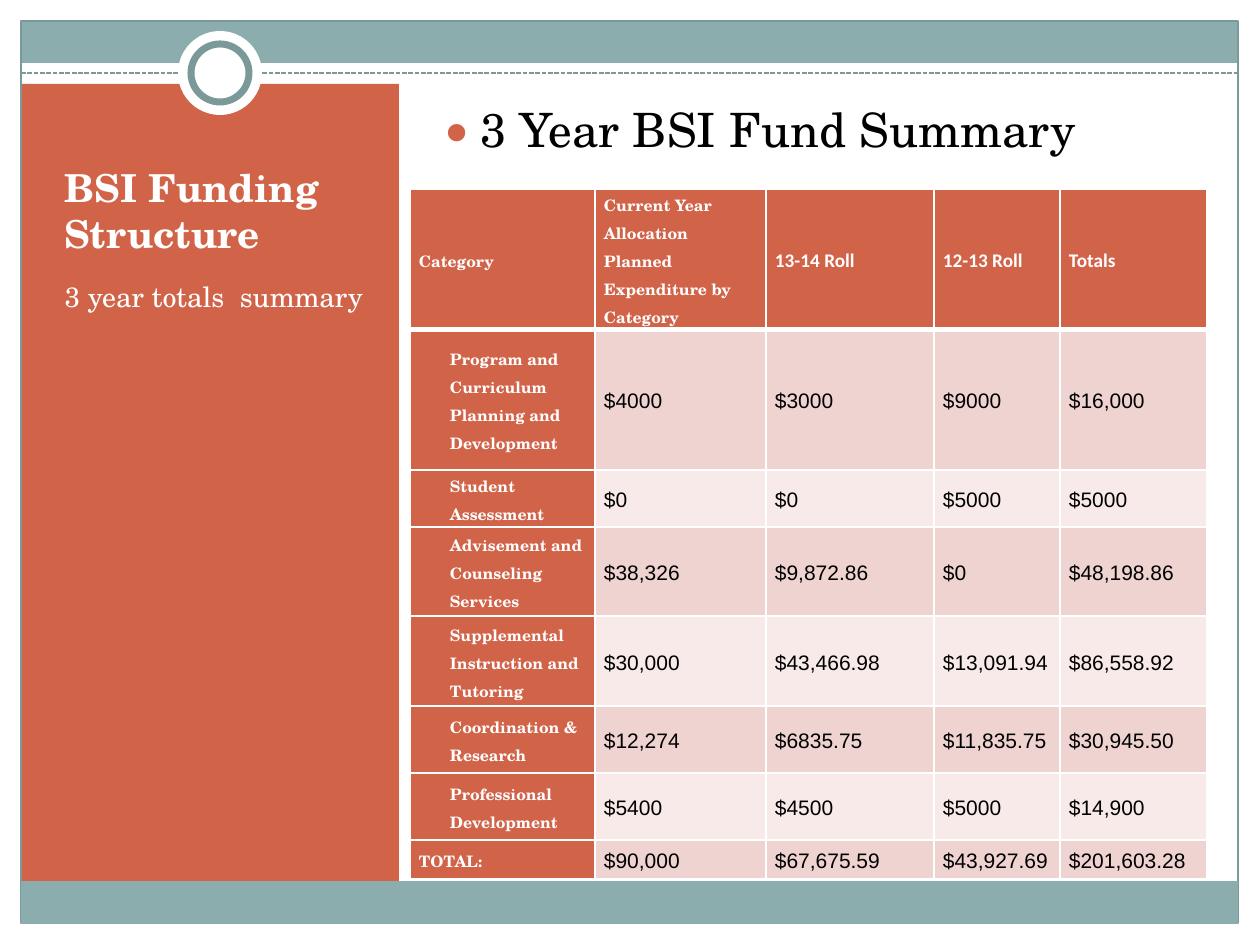
"""Build the BSI funding slide with its three-year summary table."""
from lxml import etree
from pptx import Presentation
from pptx import util as u
from pptx.dml.color import RGBColor
from pptx.enum import dml, shapes, text
from pptx.oxml import ns

WHITE = RGBColor(0xFF, 0xFF, 0xFF)
BLACK = RGBColor(0x00, 0x00, 0x00)
TEAL = RGBColor(0x8C, 0xAD, 0xAE)
SLATE = RGBColor(0x7C, 0x99, 0x9A)
RUST = RGBColor(0xD1, 0x63, 0x49)
BANDS = (RGBColor(0xEE, 0xD3, 0xD0), RGBColor(0xF7, 0xEA, 0xE9))
SERIF = "TeX Gyre Schola"

COLUMN_WIDTHS = [185, 171, 168, 126, 147]
ROW_HEIGHTS = [139, 141, 57, 89, 90, 67, 67, 39]
ROWS = [
    ["Category", "Current Year Allocation Planned Expenditure by Category",
     "13-14 Roll", "12-13 Roll", "Totals"],
    ["Program and Curriculum Planning and Development",
     "$4000", "$3000", "$9000", "$16,000"],
    ["Student Assessment", "$0", "$0", "$5000", "$5000"],
    ["Advisement and Counseling Services",
     "$38,326", "$9,872.86", "$0", "$48,198.86"],
    ["Supplemental Instruction and Tutoring",
     "$30,000", "$43,466.98", "$13,091.94", "$86,558.92"],
    ["Coordination & Research",
     "$12,274", "$6835.75", "$11,835.75", "$30,945.50"],
    ["Professional Development", "$5400", "$4500", "$5000", "$14,900"],
    ["TOTAL:", "$90,000", "$67,675.59", "$43,927.69", "$201,603.28"],
]


def px(length):
    return u.Emu(round(length * 914400 / 126))


def add_child(parent, tag, **attributes):
    child = etree.SubElement(parent, ns.qn(tag))
    for name, value in attributes.items():
        child.set(name, str(value))
    return child


def write_text(frame, words, *, size, color, font=SERIF, bold=False, spacing=1.0,
               before=0, after=0, indent=0, hanging=0, bullet=None):
    frame.word_wrap = True
    para = frame.paragraphs[0]
    para.alignment = text.PP_ALIGN.LEFT
    para.line_spacing = spacing
    para.space_before, para.space_after = u.Pt(before), u.Pt(after)
    properties = para._p.get_or_add_pPr()
    properties.set("marL", str(px(indent)))
    properties.set("indent", str(-px(hanging)))
    if bullet:
        tint = add_child(properties, "a:buClr")
        add_child(tint, "a:srgbClr", val=RUST)
        add_child(properties, "a:buSzPct", val=85000)
        add_child(properties, "a:buFont", typeface=SERIF)
        add_child(properties, "a:buChar", char=bullet)
    else:
        add_child(properties, "a:buNone")
    span = para.add_run()
    span.text = words
    span.font.name, span.font.size, span.font.bold = font, u.Pt(size), bold
    span.font.color.rgb = color


class SlideBuilder:
    """Hold the slide and its style, and add each kind of element."""

    def __init__(self, page):
        self.page = page

    def shape(self, kind, bounds, fill=None, line=None, width=1):
        box = self.page.shapes.add_shape(kind, *map(px, bounds))
        box.shadow.inherit = False
        if fill is None:
            box.fill.background()
        else:
            box.fill.solid()
            box.fill.fore_color.rgb = fill
        if line is None:
            box.line.fill.background()
        else:
            box.line.color.rgb, box.line.width = line, u.Pt(width)

    def rectangle(self, bounds, **style):
        self.shape(shapes.MSO_SHAPE.RECTANGLE, bounds, **style)

    def circle(self, center, diameter, **style):
        left, top = (middle - diameter / 2 for middle in center)
        self.shape(shapes.MSO_SHAPE.OVAL, (left, top, diameter, diameter), **style)

    def dashed_line(self, left, right, top):
        rule = self.page.shapes.add_connector(
            shapes.MSO_CONNECTOR.STRAIGHT, px(left), px(top), px(right), px(top))
        rule.line.color.rgb, rule.line.width = SLATE, u.Pt(0.9)
        rule.line.dash_style = dml.MSO_LINE.SQUARE_DOT
        add_child(rule._element.spPr, "a:effectLst")

    def placeholder(self, index, bounds, words, anchor=text.MSO_ANCHOR.TOP, **style):
        box = self.page.placeholders[index]
        box.left, box.top, box.width, box.height = map(px, bounds)
        box.text_frame.auto_size = text.MSO_AUTO_SIZE.NONE
        box.text_frame.vertical_anchor = anchor
        write_text(box.text_frame, words, **style)
        self.page.shapes._spTree.append(box._element)

    def borders(self, cell, top, bottom):
        properties = cell._tc.get_or_add_tcPr()
        for side, width in (("L", 1), ("R", 1), ("T", top), ("B", bottom)):
            edge = add_child(properties, f"a:ln{side}", w=u.Pt(width))
            solid = add_child(edge, "a:solidFill")
            add_child(solid, "a:srgbClr", val=WHITE)

    def cell(self, cell, words, fill, top, bottom, **style):
        cell.margin_left = cell.margin_right = px(9)
        cell.margin_top = cell.margin_bottom = 0
        cell.vertical_anchor = text.MSO_ANCHOR.MIDDLE
        self.borders(cell, top, bottom)
        cell.fill.solid()
        cell.fill.fore_color.rgb = fill
        write_text(cell.text_frame, words, spacing=1.15, **style)

    def table(self, left, top):
        grid = self.page.shapes.add_table(
            len(ROWS), len(COLUMN_WIDTHS), px(left), px(top),
            px(sum(COLUMN_WIDTHS)), px(sum(ROW_HEIGHTS))).table
        for column, width in zip(grid.columns, COLUMN_WIDTHS):
            column.width = px(width)
        for row, height in zip(grid.rows, ROW_HEIGHTS):
            row.height = px(height)
        label = dict(size=9, color=WHITE, bold=True)
        heading = dict(size=11, color=WHITE, bold=True, font="Calibri")
        amount = dict(size=12, color=BLACK, font="Arial")
        last = len(ROWS) - 1
        for r, values in enumerate(ROWS):
            for c, words in enumerate(values):
                if c == 0 or (r == 0 and c == 1):
                    style = dict(label, indent=31 if 0 < r < last else 0)
                else:
                    style = heading if r == 0 else amount
                fill = RUST if r == 0 or c == 0 else BANDS[(r - 1) % 2]
                self.cell(grid.cell(r, c), words, fill, top=3 if r == 1 else 1,
                          bottom=3 if r == 0 else 1, **style)


def main():
    deck = Presentation()
    deck.slide_width, deck.slide_height = px(1260), px(945)
    builder = SlideBuilder(deck.slides.add_slide(deck.slide_layouts[7]))

    builder.rectangle((21, 21, 1217, 42), fill=TEAL)
    for margin in ((0, 924, 1260, 21), (1239, 0, 21, 945),
                   (0, 0, 1260, 16), (0, 0, 21, 945)):
        builder.rectangle(margin, fill=WHITE)
    builder.rectangle((21, 84, 378, 809), fill=RUST)
    builder.rectangle((21, 21, 1217, 902), line=SLATE, width=0.75)
    builder.dashed_line(21, 1239, 73)
    builder.circle((220, 73), 84, fill=WHITE)
    builder.circle((220, 73), 58, fill=WHITE, line=SLATE, width=4)
    builder.rectangle((21, 881, 1217, 43), fill=TEAL)

    builder.placeholder(0, (52, 127, 325, 136), "BSI Funding Structure",
                        anchor=text.MSO_ANCHOR.BOTTOM, size=22, color=WHITE, bold=True)
    builder.placeholder(2, (52, 273, 325, 571), "3 year totals  summary",
                        size=16, color=WHITE, before=3, after=10)
    builder.placeholder(1, (430, 94, 777, 746), "3 Year BSI Fund Summary",
                        size=27, color=BLACK, before=5, indent=38, hanging=38, bullet="●")
    builder.table(410, 189)
    deck.save("out.pptx")


if __name__ == "__main__":
    main()
